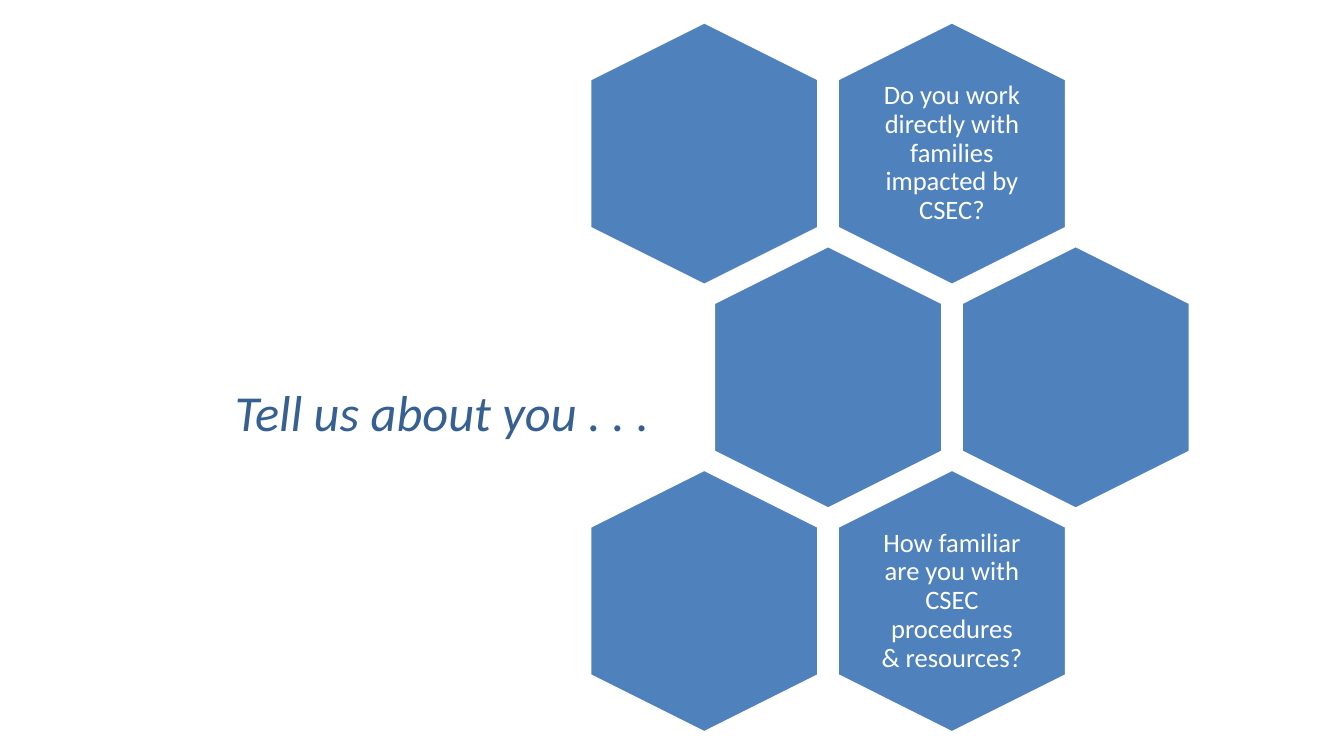
from pptx import Presentation
from pptx.dml.color import RGBColor
from pptx.enum.shapes import MSO_SHAPE
from pptx.enum.text import MSO_ANCHOR, PP_ALIGN
from pptx.util import Pt

HEX_LENGTH, HEX_BREADTH = 187.9, 163.4
FIRST_LEFT, FIRST_TOP = 409.1, 28
COLUMN_STEP, ROW_STEP = 176.9, 159.8
LABEL_WIDTH, LABEL_HEIGHT = 113, 129.6
ROWS = [
    ["", "Do you work directly with families impacted by CSEC?"],
    ["", ""],
    ["", "How familiar are you with CSEC procedures & resources?"],
]


def color(value):
    """Return the colour for a hex string."""
    return RGBColor.from_string(value)


def style_text(paragraph, size, value, align, italic=False):
    """Align a paragraph and format its runs."""
    paragraph.alignment = align
    for span in paragraph.runs:
        span.font.name = "Calibri"
        span.font.size = Pt(size)
        span.font.italic = italic
        span.font.color.rgb = color(value)


def set_title(page, text):
    """Place and format the slide title."""
    title = page.shapes.title
    title.left, title.top = Pt(160.6), Pt(268.6)
    title.width, title.height = Pt(332), Pt(51)
    title.text_frame.text = text
    title.text_frame.vertical_anchor = MSO_ANCHOR.TOP
    style_text(title.text_frame.paragraphs[0], 36, "376092", PP_ALIGN.LEFT, True)


def add_hexagon(page, left, top):
    """Add an upright honeycomb cell."""
    cell = page.shapes.add_shape(
        MSO_SHAPE.HEXAGON, Pt(left), Pt(top), Pt(HEX_LENGTH), Pt(HEX_BREADTH)
    )
    cell.rotation = 90
    cell.shadow.inherit = False
    cell.fill.solid()
    cell.fill.fore_color.rgb = color("4F81BD")
    cell.line.color.rgb = color("FFFFFF")
    cell.line.width = Pt(2)


def add_label(page, left, top, text):
    """Add a question centred on the cell at the given place."""
    box = page.shapes.add_textbox(
        Pt(left + (HEX_LENGTH - LABEL_WIDTH) / 2),
        Pt(top + (HEX_BREADTH - LABEL_HEIGHT) / 2),
        Pt(LABEL_WIDTH),
        Pt(LABEL_HEIGHT),
    )
    frame = box.text_frame
    frame.word_wrap = True
    frame.vertical_anchor = MSO_ANCHOR.MIDDLE
    frame.margin_left = frame.margin_right = Pt(5.7)
    frame.margin_top = frame.margin_bottom = Pt(5.7)
    frame.text = text
    paragraph = frame.paragraphs[0]
    paragraph.line_spacing = 0.9
    style_text(paragraph, 19, "FFFFFF", PP_ALIGN.CENTER)


def main():
    """Build the slide and save the deck."""
    deck = Presentation()
    deck.slide_width, deck.slide_height = Pt(960), Pt(540)
    page = deck.slides.add_slide(deck.slide_layouts[5])
    set_title(page, "Tell us about you . . .")
    for row, questions in enumerate(ROWS):
        for column, question in enumerate(questions):
            left = FIRST_LEFT + (column + row % 2 / 2) * COLUMN_STEP
            top = FIRST_TOP + row * ROW_STEP
            add_hexagon(page, left, top)
            if question:
                add_label(page, left, top, question)
    deck.save("out.pptx")


if __name__ == "__main__":
    main()
